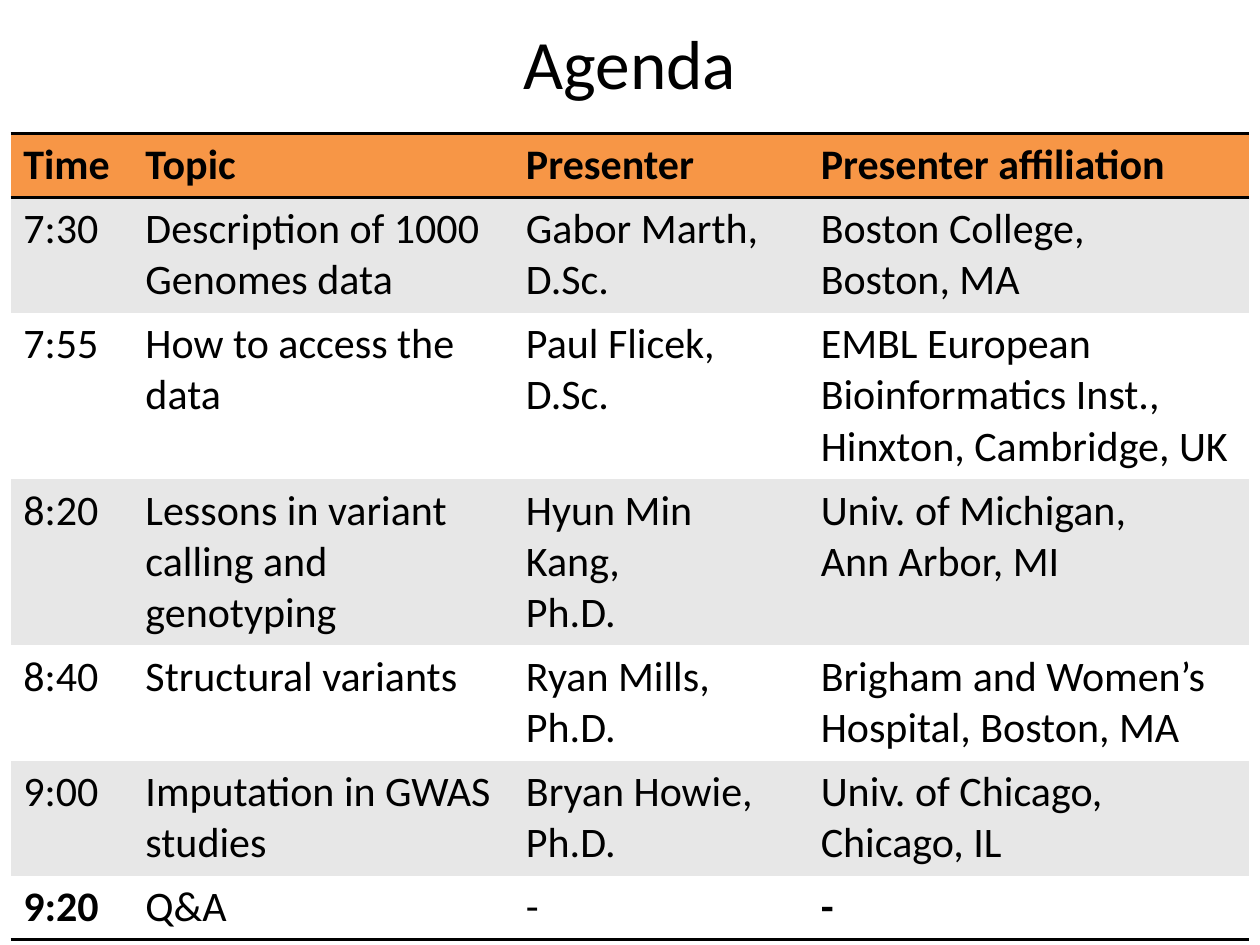
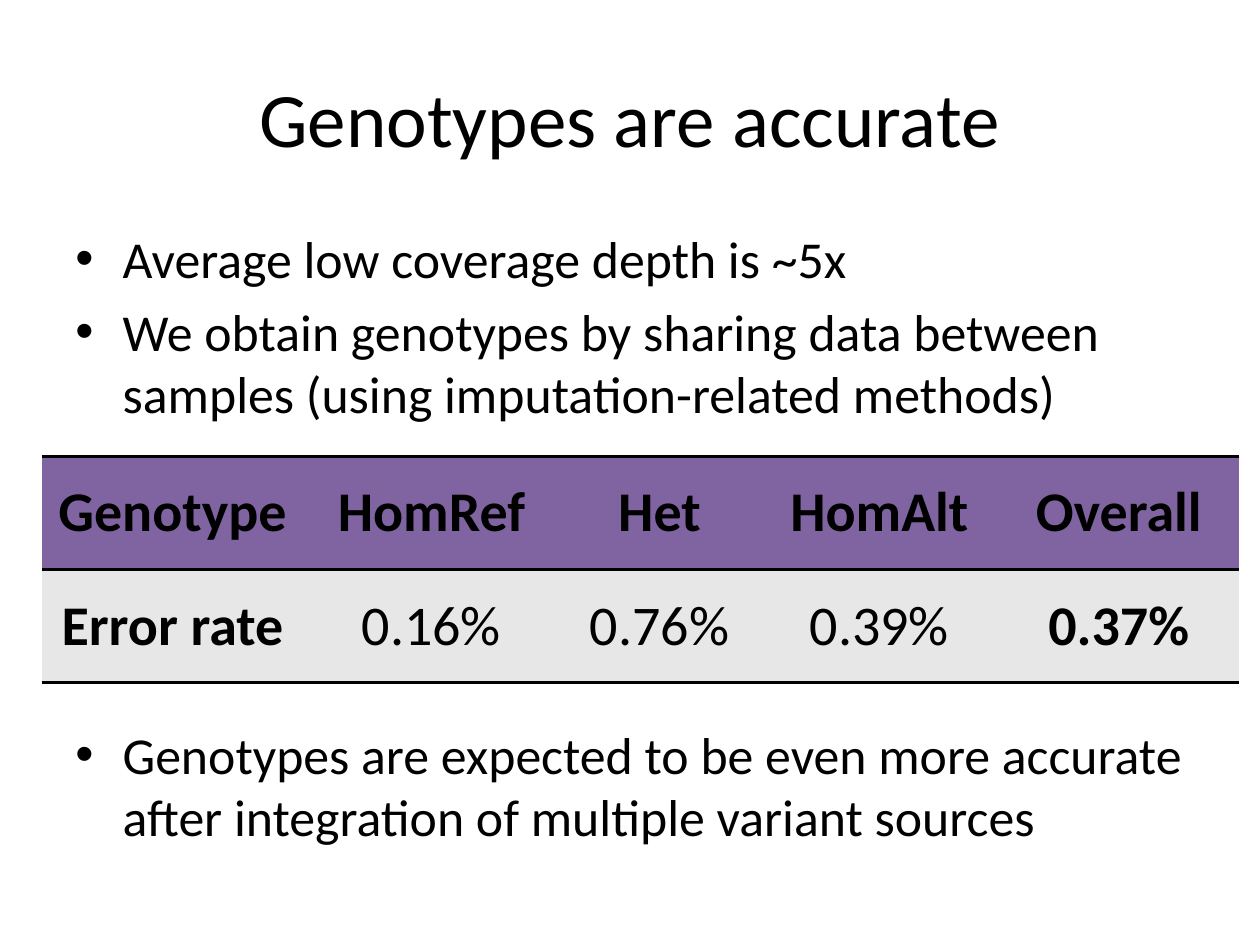
from collections import namedtuple
from dataclasses import dataclass

from lxml import etree
from pptx import Presentation
from pptx import util as u
from pptx.dml.color import RGBColor
from pptx.enum import text
from pptx.oxml import ns

COLUMNS, ROWS = 100, 75
Box = namedtuple("Box", "left top width height")


@dataclass(frozen=True)
class Theme:
    font: str = "Calibri"
    ink: str = "000000"
    band: str = "E7E7E7"
    paper: str = "FFFFFF"
    orange: str = "F79646"
    purple: str = "8064A2"
    rule: float = 2
    agenda_title: float = 39.6
    title: float = 44
    body: float = 29.6
    agenda_cell: float = 24
    rate_cell: float = 32
    plain_table: str = "{2D5ABB26-0587-4C30-8999-92F81FD0307C}"


THEME = Theme()

AGENDA = [
    ("Time", "Topic", "Presenter", "Presenter affiliation"),
    ("7:30", "Description of 1000 Genomes data", "Gabor Marth, D.Sc.",
     "Boston College,\nBoston, MA"),
    ("7:55", "How to access the data", "Paul Flicek, D.Sc.",
     "EMBL European Bioinformatics Inst., Hinxton, Cambridge, UK"),
    ("8:20", "Lessons in variant calling and genotyping",
     "Hyun Min Kang,\nPh.D.", "Univ. of Michigan,\nAnn Arbor, MI"),
    ("8:40", "Structural variants", "Ryan Mills, Ph.D.",
     "Brigham and Women’s Hospital, Boston, MA"),
    ("9:00", "Imputation in GWAS studies", "Bryan Howie, Ph.D.",
     "Univ. of Chicago,\nChicago, IL"),
    ("9:20", "Q&A", "-", "-"),
]
AGENDA_LINES = [1, 2, 3, 3, 2, 2, 1]

ERROR_RATES = [
    ("Genotype", "HomRef", "Het", "HomAlt", "Overall"),
    ("Error rate", "0.16%", "0.76%", "0.39%", "0.37%"),
]

POINTS = [
    ("Average low coverage depth is ~5x", 0),
    ("We obtain genotypes by sharing data between samples "
     "(using imputation-related methods)", 6),
    ("Genotypes are expected to be even more accurate after integration "
     "of multiple variant sources", 171),
]


def apply(target, values):
    for name, value in values.items():
        setattr(target, name, value)


def format_font(paragraph, size, bold=False):
    apply(paragraph.font, {"name": THEME.font, "size": u.Pt(size), "bold": bold})
    paragraph.font.color.rgb = RGBColor.from_string(THEME.ink)


def place(presentation, box):
    column = presentation.slide_width / COLUMNS
    row = presentation.slide_height / ROWS
    return [round(length * unit) for length, unit in zip(box, (column, row) * 2)]


def add_text_frame(presentation, slide, box, anchor):
    frame = slide.shapes.add_textbox(*place(presentation, box)).text_frame
    apply(frame, {"word_wrap": True, "vertical_anchor": anchor})
    return frame


def add_title(presentation, slide, box, words, size):
    frame = add_text_frame(presentation, slide, box, text.MSO_ANCHOR.MIDDLE)
    frame.text = words
    paragraph = frame.paragraphs[0]
    paragraph.alignment = text.PP_ALIGN.CENTER
    format_font(paragraph, size)


def add_bullets(presentation, slide, box, points):
    frame = add_text_frame(presentation, slide, box, text.MSO_ANCHOR.TOP)
    indent = round(presentation.slide_width * 0.0375)
    for index, (words, space) in enumerate(points):
        paragraph = frame.add_paragraph() if index else frame.paragraphs[0]
        paragraph.text = words
        paragraph.space_before = u.Pt(space)
        properties = paragraph._p.get_or_add_pPr()
        properties.set("marL", str(indent))
        properties.set("indent", str(-indent))
        etree.SubElement(properties, ns.qn("a:buFont"), typeface="Arial")
        etree.SubElement(properties, ns.qn("a:buChar"), char="•")
        format_font(paragraph, THEME.body)


def add_rule(cell, side):
    line = etree.SubElement(cell._tc.get_or_add_tcPr(), ns.qn(f"a:ln{side}"),
                            w=str(u.Pt(THEME.rule)))
    fill = etree.SubElement(line, ns.qn("a:solidFill"))
    etree.SubElement(fill, ns.qn("a:srgbClr"), val=THEME.ink)


def share_out(tracks, name, total, weights):
    for track, weight in zip(tracks, weights):
        setattr(track, name, round(total * weight / sum(weights)))


def add_ruled_table(presentation, slide, box, cells, widths, heights,
                    header, size, bold_cells, cell_format, alignment):
    left, top, width, height = place(presentation, box)
    table = slide.shapes.add_table(len(cells), len(cells[0]),
                                   left, top, width, height).table
    table._tbl.tblPr[0].text = THEME.plain_table
    table.horz_banding = False
    share_out(table.columns, "width", width, widths)
    share_out(table.rows, "height", height, heights)
    last = len(cells) - 1
    for row, entries in enumerate(cells):
        fill = header if row == 0 else (THEME.paper, THEME.band)[row % 2]
        for column, words in enumerate(entries):
            cell = table.cell(row, column)
            cell.text = words
            apply(cell, cell_format)
            if row == 0:
                add_rule(cell, "T")
            if row in (0, last):
                add_rule(cell, "B")
            cell.fill.solid()
            cell.fill.fore_color.rgb = RGBColor.from_string(fill)
            for paragraph in cell.text_frame.paragraphs:
                paragraph.alignment = alignment
                format_font(paragraph, size,
                            row == 0 or (row, column) in bold_cells)


def add_slide(presentation):
    return presentation.slides.add_slide(presentation.slide_layouts[6])


def build_agenda(presentation):
    slide = add_slide(presentation)
    add_title(presentation, slide, Box(5, 1.3, 90, 7.2), "Agenda",
              THEME.agenda_title)
    heights = [1 + 4.07 * lines for lines in AGENDA_LINES]
    add_ruled_table(presentation, slide, Box(0.85, 10.6, 98.3, sum(heights)),
                    AGENDA, [0.97, 3.02, 2.34, 3.5], heights, THEME.orange,
                    THEME.agenda_cell, {(6, 0), (6, 3)},
                    {"vertical_anchor": text.MSO_ANCHOR.TOP},
                    text.PP_ALIGN.LEFT)


def build_accuracy(presentation):
    slide = add_slide(presentation)
    add_title(presentation, slide, Box(5, 3, 90, 12.5),
              "Genotypes are accurate", THEME.title)
    add_bullets(presentation, slide, Box(5, 17.5, 90, 53.3), POINTS)
    add_ruled_table(presentation, slide, Box(3.3, 36.2, 95, 18), ERROR_RATES,
                    [2.08, 2.03, 1.59, 1.9, 1.9], [1, 1], THEME.purple,
                    THEME.rate_cell, {(1, 0), (1, 4)},
                    {"vertical_anchor": text.MSO_ANCHOR.MIDDLE},
                    text.PP_ALIGN.CENTER)


def main():
    presentation = Presentation()
    apply(presentation, {"slide_width": u.Inches(10),
                         "slide_height": u.Inches(7.5)})
    build_agenda(presentation)
    build_accuracy(presentation)
    presentation.save("out.pptx")


if __name__ == "__main__":
    main()
